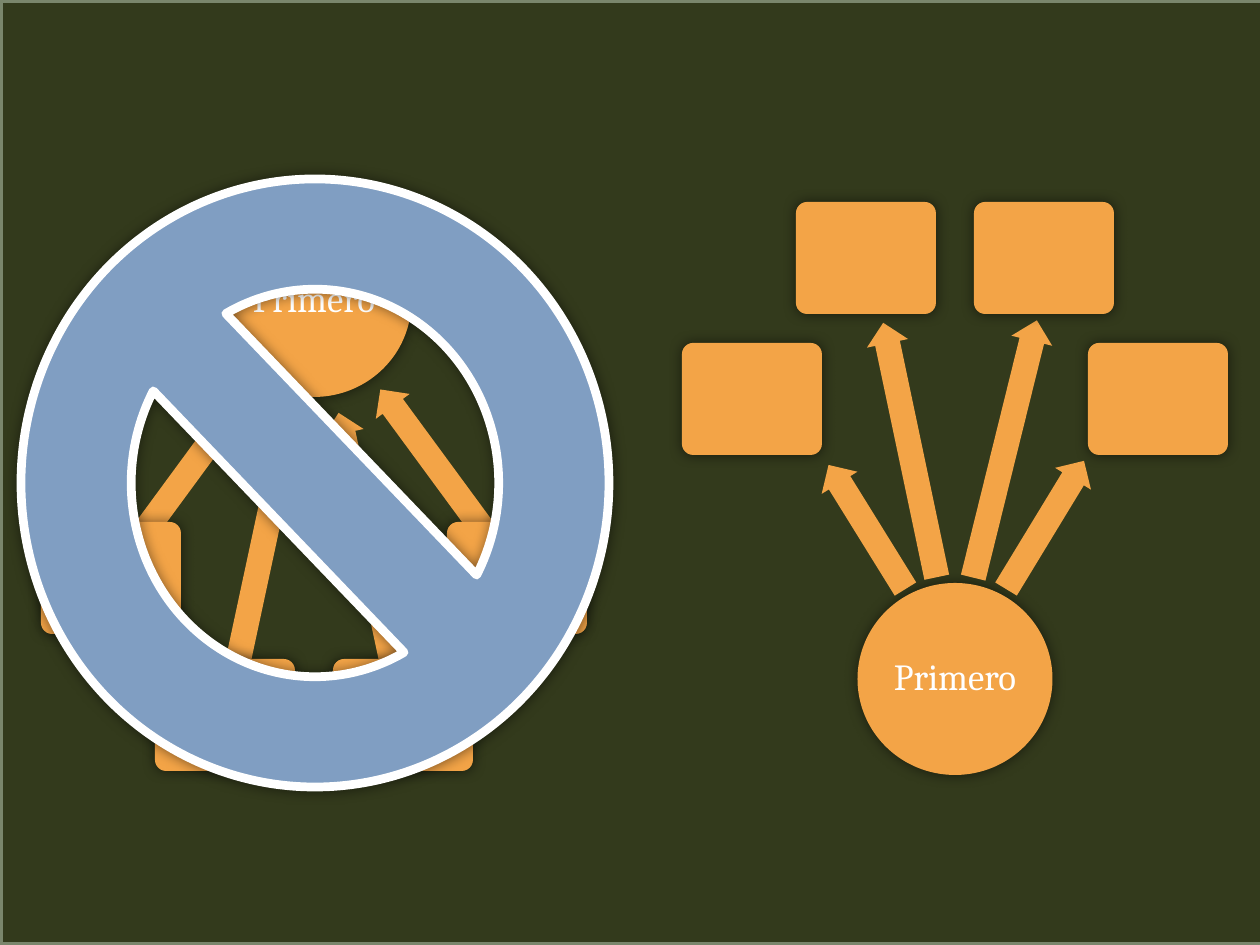
from dataclasses import dataclass

import lxml.etree
import pptx
import pptx.dml.color
import pptx.enum.shapes
import pptx.enum.text
import pptx.oxml.ns
import pptx.util

EMU_PER_PX = 914400 / 126
COLORS = {
    "black": "000000",
    "backdrop": "333A1C",
    "frame": "7A866C",
    "orange": "F3A447",
    "blue": "809EC2",
    "white": "FFFFFF",
}
HUB_SIZE = (195, 192)
CARD_SIZE = (140, 112)
ARROW_THICKNESS = 42
SHAPES = pptx.enum.shapes.MSO_SHAPE


@dataclass(frozen=True)
class Branch:
    card: tuple[int, int]
    arrow: tuple[int, int]
    length: int
    rotation: float


@dataclass(frozen=True)
class Diagram:
    hub: tuple[int, int]
    label: str
    branches: tuple[Branch, ...]


DIAGRAMS = (
    Diagram((314, 301), "Primero", (
        Branch((-203, 277), (-134, 182), 232, 126.3),
        Branch((-89, 414), (-55, 263), 309, 102.1),
        Branch((89, 414), (57, 263), 309, 77.9),
        Branch((203, 277), (135, 182), 232, 53.7),
    )),
    Diagram((955, 679), "Primero", (
        Branch((-203, -280), (-88, -152), 146, 58.2),
        Branch((-89, -421), (-45, -229), 260, 78.1),
        Branch((89, -421), (50, -230), 265, 103.9),
        Branch((203, -280), (90, -154), 150, 121.3),
    )),
)


def px(length: float) -> int:
    return round(length * EMU_PER_PX)


def rgb(name: str) -> pptx.dml.color.RGBColor:
    return pptx.dml.color.RGBColor.from_string(COLORS[name])


def add_glow_shadow(shape) -> None:
    qn = pptx.oxml.ns.qn
    effects = shape.element.spPr.find(qn("a:effectLst"))
    shadow = lxml.etree.SubElement(
        effects, qn("a:outerShdw"),
        blurRad=str(pptx.util.Pt(7.5)), dist="0", dir="0", rotWithShape="0",
    )
    tint = lxml.etree.SubElement(shadow, qn("a:srgbClr"), val=COLORS["black"])
    lxml.etree.SubElement(tint, qn("a:alpha"), val="50000")


def add_filled(shapes, preset, center: tuple[float, float], size: tuple[int, int],
               color: str, line: tuple[str, float] | None = None,
               adjustments: tuple[float, ...] = (), shadow: bool = True):
    (x, y), (width, height) = center, size
    shape = shapes.add_shape(
        preset, px(x - width / 2), px(y - height / 2), px(width), px(height))
    shape.shadow.inherit = False
    shape.fill.solid()
    shape.fill.fore_color.rgb = rgb(color)
    if line:
        shape.line.color.rgb = rgb(line[0])
        shape.line.width = pptx.util.Pt(line[1])
    else:
        shape.line.fill.background()
    for index, value in enumerate(adjustments):
        shape.adjustments[index] = value
    if shadow:
        add_glow_shadow(shape)
    return shape


def write_label(shape, label: str) -> None:
    frame = shape.text_frame
    frame.word_wrap = True
    frame.vertical_anchor = pptx.enum.text.MSO_ANCHOR.MIDDLE
    frame.margin_left = frame.margin_right = px(1)
    frame.margin_top = frame.margin_bottom = px(1)
    frame.text = label
    paragraph = frame.paragraphs[0]
    paragraph.alignment = pptx.enum.text.PP_ALIGN.CENTER
    paragraph.line_spacing = 0.9
    font = paragraph.runs[0].font
    font.name = "Cambria"
    font.size = pptx.util.Pt(21)
    font.color.rgb = rgb("white")


def draw_diagram(slide, diagram: Diagram) -> None:
    shapes = slide.shapes.add_group_shape().shapes
    hub_x, hub_y = diagram.hub
    hub = add_filled(shapes, SHAPES.OVAL, diagram.hub, HUB_SIZE, "orange")
    write_label(hub, diagram.label)
    for branch in diagram.branches:
        arrow = add_filled(
            shapes, SHAPES.LEFT_ARROW,
            (hub_x + branch.arrow[0], hub_y + branch.arrow[1]),
            (branch.length, ARROW_THICKNESS), "orange",
            adjustments=(0.6, 0.5), shadow=False)
        arrow.rotation = branch.rotation
        add_filled(
            shapes, SHAPES.ROUNDED_RECTANGLE,
            (hub_x + branch.card[0], hub_y + branch.card[1]),
            CARD_SIZE, "orange", adjustments=(0.1,))


def main() -> None:
    presentation = pptx.Presentation()
    presentation.slide_width = px(1260)
    presentation.slide_height = px(945)
    slide = presentation.slides.add_slide(presentation.slide_layouts[6])
    slide.background.fill.solid()
    slide.background.fill.fore_color.rgb = rgb("black")
    add_filled(slide.shapes, SHAPES.RECTANGLE, (635, 472.5), (1270, 945),
               "backdrop", line=("frame", 3), shadow=False)
    for diagram in DIAGRAMS:
        draw_diagram(slide, diagram)
    add_filled(slide.shapes, SHAPES.NO_SYMBOL, (315, 483), (588, 608),
               "blue", line=("white", 5))
    presentation.save("out.pptx")


if __name__ == "__main__":
    main()
